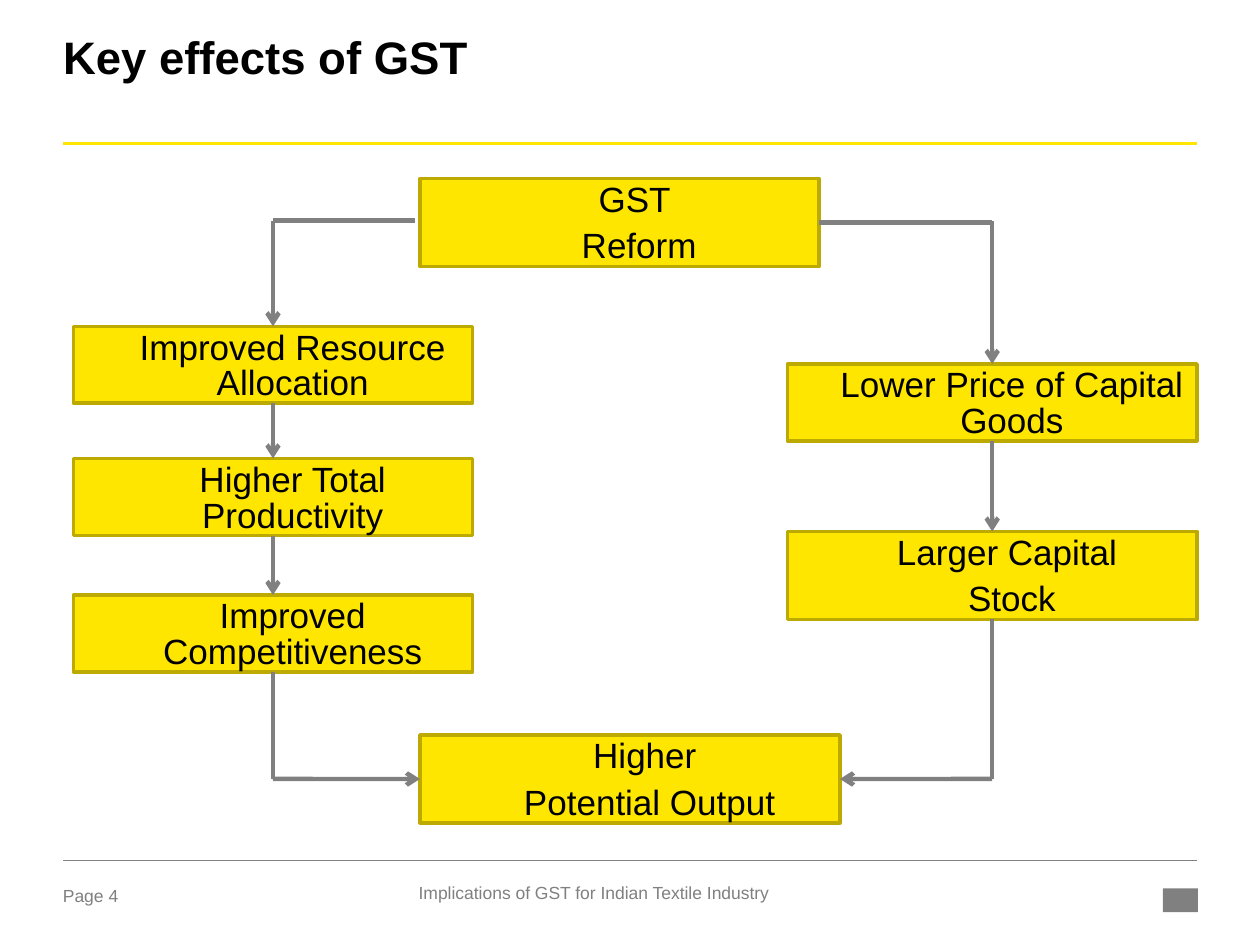
import pptx
import pptx.util
import pptx.dml.color
import pptx.enum.shapes
import pptx.enum.text
import pptx.oxml
import pptx.oxml.ns

Pt = pptx.util.Pt
SHAPE = pptx.enum.shapes.MSO_SHAPE
ALIGN = pptx.enum.text.PP_ALIGN
FIT = pptx.enum.text.MSO_AUTO_SIZE

COLORS = {"yellow": "FFE600", "edge": "BDAA00", "gray": "808080", "black": "000000"}

# Content: lengths in points
TITLE = "Key effects of GST"
FOOTERS = [  # text, left, top, width, height, alignment
    ("Page 4", 36, 505.5, 52.5, 16, ALIGN.LEFT),
    ("Implications of GST for Indian Textile Industry", 204, 504, 270.5, 16, ALIGN.CENTER),
]
RULES = [(82, "yellow", 1.5), (491.5, "gray", 0.25)]  # y, colour, weight
BOXES = {  # paragraphs, left, top, width
    "reform": (["GST ", "Reform"], 240, 102, 228),
    "price": (["Lower Price of Capital Goods"], 450, 208, 234),
    "stock": (["Larger Capital ", "Stock"], 450, 303.75, 234),
    "allocation": (["Improved Resource Allocation"], 42, 186.5, 228),
    "productivity": (["Higher Total Productivity"], 42, 262, 228),
    "competitiveness": (["Improved Competitiveness"], 42, 340, 228),
    "output": (["Higher ", "Potential Output"], 240, 420, 240),
}
HEIGHTS = {1: 44, 2: 50.25}  # by number of paragraphs
TOP, LEFT, BOTTOM, RIGHT = range(4)
LEFT_X, RIGHT_X, BRANCH_Y, MERGE_Y = 156, 567, 126, 445.12
LINKS = [  # start, end (box and side, or a point), arrowhead
    (("reform", RIGHT), (RIGHT_X, 127.12), False),
    ((RIGHT_X, BRANCH_Y), ("price", TOP), True),
    ((LEFT_X, BRANCH_Y), ("allocation", TOP), True),
    ((LEFT_X, BRANCH_Y), (237, BRANCH_Y), False),
    (("allocation", BOTTOM), ("productivity", TOP), True),
    (("productivity", BOTTOM), ("competitiveness", TOP), True),
    (("price", BOTTOM), ("stock", TOP), True),
    ((RIGHT_X, MERGE_Y), ("stock", BOTTOM), False),
    ((LEFT_X, MERGE_Y), ("competitiveness", BOTTOM), False),
    ((LEFT_X, MERGE_Y), ("output", LEFT), True),
    ((RIGHT_X, MERGE_Y), ("output", RIGHT), True),
]


def rgb(name):
    return pptx.dml.color.RGBColor.from_string(COLORS[name])


def set_all(obj, values):
    for name, value in values.items():
        setattr(obj, name, value)


def place(sp, *frame):
    set_all(sp, dict(zip(("left", "top", "width", "height"), map(Pt, frame))))


def write(sp, texts, size, color, align, inset_top=0, bold=False, fit=FIT.NONE, **spacing):
    tf = sp.text_frame
    set_all(tf, {"margin_left": 0, "margin_right": 0, "margin_top": Pt(inset_top),
                 "margin_bottom": 0, "word_wrap": True, "auto_size": fit,
                 "vertical_anchor": pptx.enum.text.MSO_ANCHOR.TOP})
    for i, text in enumerate(texts):
        p = tf.add_paragraph() if i else tf.paragraphs[0]
        set_all(p, {"alignment": align, **spacing})
        r = p.add_run()
        r.text = text
        set_all(r.font, {"name": "Arial", "size": Pt(size), "bold": bold})
        r.font.color.rgb = rgb(color)
    return tf


def add_line(shapes, start, end, color, weight, arrow=False):
    line = shapes.add_connector(pptx.enum.shapes.MSO_CONNECTOR.STRAIGHT,
                                *map(Pt, start + end))
    line.line.color.rgb = rgb(color)
    line.line.width = Pt(weight)
    if arrow:
        tail = pptx.oxml.ns.qn("a:tailEnd")
        line.line._get_or_add_ln().append(
            line._element.makeelement(tail, {"type": "arrow"}))
    line._element.spPr.append(
        line._element.makeelement(pptx.oxml.ns.qn("a:effectLst"), {}))
    return line


def end_point(end):
    if end[0] not in BOXES:
        return end
    name, side = end
    texts, x, y, w = BOXES[name]
    h = HEIGHTS[len(texts)]
    return {TOP: (x + w / 2, y), LEFT: (x, y + h / 2),
            BOTTOM: (x + w / 2, y + h), RIGHT: (x + w, y + h / 2)}[side]


def main():
    prs = pptx.Presentation()
    set_all(prs, {"slide_width": Pt(720), "slide_height": Pt(540)})
    s = prs.slides.add_slide(prs.slide_layouts[5])
    shapes = s.shapes

    # Title, rules and footer
    place(shapes.title, 36, 21.5, 648, 61)
    write(shapes.title, [TITLE], 26, "black", ALIGN.LEFT, bold=True, line_spacing=0.85)
    for y, color, weight in RULES:
        add_line(shapes, (36, y), (684, y), color, weight)
    for text, x, y, w, h, align in FOOTERS:
        write(shapes.add_textbox(*map(Pt, (x, y, w, h))), [text], 10, "gray", align)

    # Plain block at the lower right corner
    block = shapes.add_shape(SHAPE.RECTANGLE, *map(Pt, (664.5, 507.75, 20, 13.5)))
    block.shadow.inherit = False
    block.fill.solid()
    block.fill.fore_color.rgb = rgb("gray")
    block.line.fill.background()

    # Effect boxes
    boxes = {}
    for name, (texts, x, y, w) in BOXES.items():
        sp = boxes[name] = shapes.add_shape(
            SHAPE.RECTANGLE, *map(Pt, (x, y, w, HEIGHTS[len(texts)])))
        sp.shadow.inherit = False
        sp.fill.solid()
        sp.fill.fore_color.rgb = rgb("yellow")
        sp.line.color.rgb = rgb("edge")
        sp.line.width = Pt(2)
        tf = write(sp, texts, 20, "black", ALIGN.CENTER, inset_top=3,
                   fit=FIT.SHAPE_TO_FIT_TEXT, line_spacing=0.85, space_after=Pt(6))
        for p in tf.paragraphs:
            p._p.get_or_add_pPr().set("marL", str(Pt(22.5)))

    # Links between the boxes
    for start, end, arrow in LINKS:
        line = add_line(shapes, end_point(start), end_point(end), "gray", 2.5, arrow)
        for join, (name, side) in ((line.begin_connect, start), (line.end_connect, end)):
            if name in boxes:
                join(boxes[name], side)

    prs.save("out.pptx")


if __name__ == "__main__":
    main()
